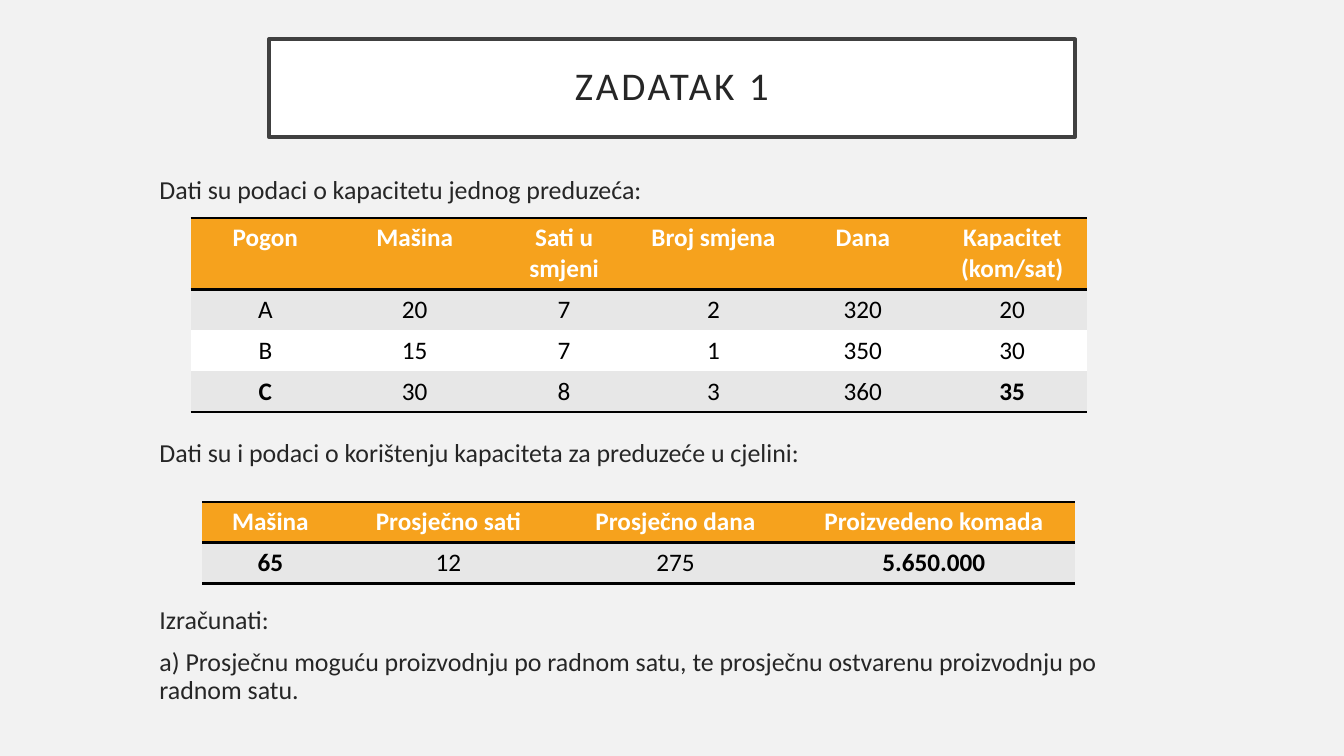
from lxml import etree
from pptx import Presentation
from pptx.dml import color
from pptx.enum import text
from pptx.oxml import ns
from pptx.util import Pt

COLORS = {
    "background": "F2F2F2",
    "white": "FFFFFF",
    "frame": "404040",
    "ink": "262626",
    "black": "000000",
    "header": "F6A21D",
    "band": "E7E7E7",
}
CAPACITY = [
    ["Pogon", "Mašina", "Sati u smjeni", "Broj smjena", "Dana", "Kapacitet (kom/sat)"],
    ["A", "20", "7", "2", "320", "20"],
    ["B", "15", "7", "1", "350", "30"],
    ["C", "30", "8", "3", "360", "35"],
]
USAGE = [
    ["Mašina", "Prosječno sati", "Prosječno dana", "Proizvedeno komada"],
    ["65", "12", "275", "5.650.000"],
]
BODY = [
    ("Dati su podaci o kapacitetu jednog preduzeća:", 0),
    ("Dati su i podaci o korištenju kapaciteta za preduzeće u cjelini:", 167.5),
    ("Izračunati:", 99.7),
    ("a) Prosječnu moguću proizvodnju po radnom satu, te prosječnu ostvarenu "
     "proizvodnju po radnom satu.", 10),
]


def rgb(name):
    return color.RGBColor.from_string(COLORS[name])


def apply(target, values):
    for name, value in values.items():
        setattr(target, name, value)


def paint(fill, name):
    fill.solid()
    fill.fore_color.rgb = rgb(name)


def place(box, left, top, width, height):
    apply(box, {"left": Pt(left), "top": Pt(top), "width": Pt(width), "height": Pt(height)})


def write(para, words, size, ink, bold=False, align=text.PP_ALIGN.CENTER, **layout):
    apply(para, {"alignment": align, **layout})
    span = para.add_run()
    span.text = words
    apply(span.font, {"name": "Calibri", "size": Pt(size), "bold": bold})
    span.font.color.rgb = rgb(ink)
    return span


def add_title(page, words):
    box = page.shapes.title
    place(box, 192, 28, 576, 70)
    paint(box.fill, "white")
    box.line.color.rgb = rgb("frame")
    box.line.width = Pt(2.5)
    margins = {f"margin_{side}": Pt(14.4) for side in ("left", "right", "top", "bottom")}
    apply(box.text_frame, {"vertical_anchor": text.MSO_ANCHOR.MIDDLE, "word_wrap": True,
                           "auto_size": text.MSO_AUTO_SIZE.NONE, **margins})
    span = write(box.text_frame.paragraphs[0], words, 28, "ink", line_spacing=0.9)
    span.font._element.set("spc", "200")


def add_body(page, lines):
    box = page.placeholders[1]
    place(box, 106.7, 123.1, 729.4, 397.4)
    frame = box.text_frame
    apply(frame, {"vertical_anchor": text.MSO_ANCHOR.TOP, "word_wrap": True,
                  "auto_size": text.MSO_AUTO_SIZE.NONE})
    for index, (words, gap) in enumerate(lines):
        para = frame.add_paragraph() if index else frame.paragraphs[0]
        write(para, words, 18.5, "ink", align=text.PP_ALIGN.LEFT,
              line_spacing=0.9, space_before=Pt(gap), space_after=Pt(0))
        settings = para._p.get_or_add_pPr()
        settings.set("marL", "0")
        settings.set("indent", "0")
        etree.SubElement(settings, ns.qn("a:buNone"))


def set_borders(cell, ruled_sides):
    settings = cell._tc.get_or_add_tcPr()
    for side in "LRTB":
        line = etree.SubElement(settings, ns.qn(f"a:ln{side}"), w=str(Pt(2)))
        if side in ruled_sides:
            solid = etree.SubElement(line, ns.qn("a:solidFill"))
            etree.SubElement(solid, ns.qn("a:srgbClr"), val=COLORS["black"])
        else:
            etree.SubElement(line, ns.qn("a:noFill"))


def add_data_table(page, left, top, widths, heights, rows):
    frame = page.shapes.add_table(len(rows), len(widths), Pt(left), Pt(top),
                                  Pt(sum(widths)), Pt(sum(heights)))
    table = frame.table
    for column, width in zip(table.columns, widths):
        column.width = Pt(width)
    last_row, last_column = len(rows) - 1, len(widths) - 1
    for r, values in enumerate(rows):
        table.rows[r].height = Pt(heights[r])
        sides = ("T" if r < 2 else "") + ("B" if r in (0, last_row) else "")
        background = "header" if r == 0 else "band" if r % 2 else "white"
        for c, value in enumerate(values):
            cell = table.cell(r, c)
            set_borders(cell, sides)
            paint(cell.fill, background)
            emphasised = r == 0 or (r == last_row and c in (0, last_column))
            write(cell.text_frame.paragraphs[0], value, 18,
                  "black" if r else "white", emphasised)


def main():
    deck = Presentation()
    apply(deck, {"slide_width": Pt(960), "slide_height": Pt(540)})
    page = deck.slides.add_slide(deck.slide_layouts[1])
    paint(page.background.fill, "background")
    add_title(page, "ZADATAK 1")
    add_body(page, BODY)
    add_data_table(page, 136.2, 155.6, [106.7] * 6, [51.2] + [29.2] * 3, CAPACITY)
    add_data_table(page, 144.5, 358.4, [97.2, 157.2, 167.2, 201.8], [29.2] * 2, USAGE)
    deck.save("out.pptx")


if __name__ == "__main__":
    main()
